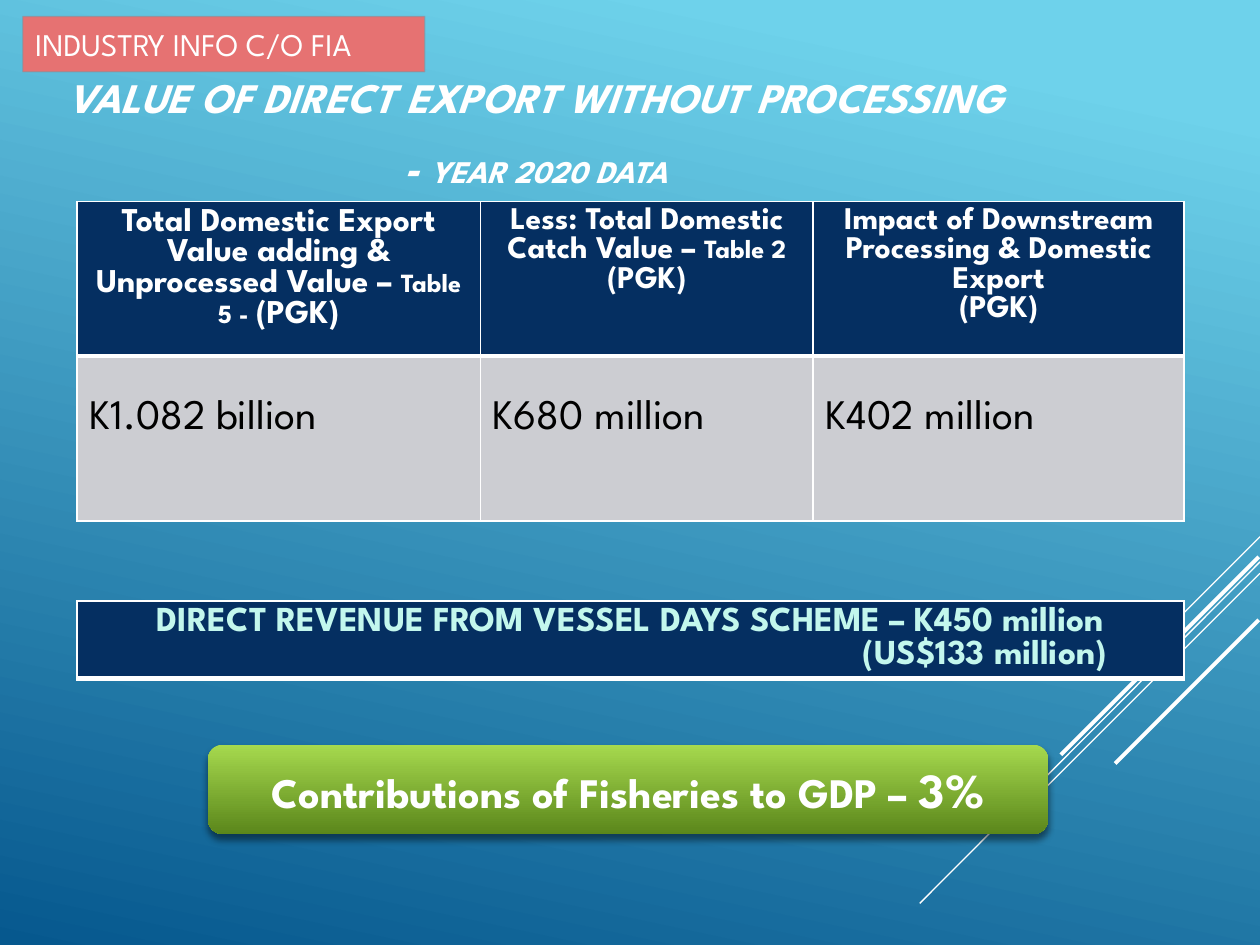
import pptx
import pptx.util
import pptx.dml.color
import pptx.enum.shapes
import pptx.enum.text
import pptx.oxml
import pptx.oxml.ns

Pt = pptx.util.Pt
CENTER = pptx.enum.text.PP_ALIGN.CENTER
LEFT = pptx.enum.text.PP_ALIGN.LEFT
MIDDLE = pptx.enum.text.MSO_ANCHOR.MIDDLE
SHAPES = pptx.enum.shapes.MSO_SHAPE
FONT = "League Spartan"
COLORS = {
    "sky": "6ED2EB", "deep": "06588E", "white": "FFFFFF", "black": "000000",
    "navy": "052F61", "grey": "CCCDD2", "mint": "C3F7ED", "coral": "E67272",
    "outline": "89919C", "lime": "A6D94E", "olive": "5B871B",
}


def rgb(name):
    return pptx.dml.color.RGBColor.from_string(COLORS[name])


def xml(text):
    return pptx.oxml.parse_xml(text.replace(">", f" {pptx.oxml.ns.nsdecls('a')}>", 1))


def add_text(paragraph, text, size=18, color="white", bold=False, italic=False, align=LEFT):
    paragraph.alignment = align
    run = paragraph.add_run()
    run.text = text
    run.font.name = FONT
    run.font.size = Pt(size)
    run.font.bold = bold
    run.font.italic = italic
    run.font.color.rgb = rgb(color)


def fill_gradient(fill, stops, angle):
    fill.gradient()
    fill.gradient_angle = 360 - angle
    for stop, (position, color) in zip(fill.gradient_stops, stops):
        stop.position = position
        stop.color.rgb = rgb(color)


def set_borders(cell, bottom):
    properties = cell._tc.get_or_add_tcPr()
    widths = {"lnL": 1, "lnR": 1, "lnT": 1, "lnB": bottom}
    for index, (side, width) in enumerate(widths.items()):
        properties.insert(index, xml(
            f'<a:{side} w="{int(Pt(width))}"><a:solidFill>'
            f'<a:srgbClr val="{COLORS["white"]}"/></a:solidFill></a:{side}>'))


def format_cell(cell, fill, bottom=1):
    cell.fill.solid()
    cell.fill.fore_color.rgb = rgb(fill)
    set_borders(cell, bottom)


def add_grid(slide, left, top, widths, heights):
    frame = slide.shapes.add_table(len(heights), len(widths), Pt(left), Pt(top),
                                   Pt(sum(widths)), Pt(sum(heights)))
    table = frame.table
    table.horz_banding = False
    for column, width in zip(table.columns, widths):
        column.width = Pt(width)
    for row, height in zip(table.rows, heights):
        row.height = Pt(height)
    return table


def add_box(slide, kind, left, top, width, height):
    shape = slide.shapes.add_shape(kind, Pt(left), Pt(top), Pt(width), Pt(height))
    shape.shadow.inherit = False
    shape.text_frame.word_wrap = True
    shape.text_frame.vertical_anchor = MIDDLE
    return shape


# Diagonal lines in the lower right corner
def add_diagonals(slide):
    for x1, y1, x2, y2, width in (
            (720, 306.7, 660.2, 366.5, 0.75), (720, 321.1, 525.6, 516.2, 0.75),
            (720, 327.6, 596.2, 451.4, 0.75), (719.3, 318.2, 606.2, 431.3, 2.25),
            (719.3, 354.2, 637.2, 436.3, 2.25)):
        line = slide.shapes.add_connector(pptx.enum.shapes.MSO_CONNECTOR.STRAIGHT,
                                          Pt(x1), Pt(y1), Pt(x2), Pt(y2))
        line.line.color.rgb = rgb("white")
        line.line.width = Pt(width)
        line._element.spPr.append(xml("<a:effectLst></a:effectLst>"))


def add_title(slide, left, top, width, height):
    title = slide.shapes.title
    title.left, title.top, title.width, title.height = map(Pt, (left, top, width, height))
    frame = title.text_frame
    frame.word_wrap = True
    frame.vertical_anchor = MIDDLE
    frame.margin_bottom = Pt(7)
    paragraph = frame.paragraphs[0]
    paragraph.line_spacing = 1.4
    style = {"bold": True, "italic": True, "align": CENTER}
    add_text(paragraph, "VALUE OF DIRECT EXPORT WITHOUT PROCESSING", size=24, **style)
    paragraph.add_line_break()
    add_text(paragraph, "- ", size=24, **style)
    add_text(paragraph, "YEAR 2020 DATA", size=18, **style)


# Export values: each column has header paragraphs made of (text, size) runs
def add_export_table(slide, left, top):
    columns = [
        (230.6, [[("Total Domestic Export", 19)],
                 [("Value adding & Unprocessed Value – ", 19), ("Table 5 - ", 15), ("(PGK)", 19)]],
         "K1.082 billion"),
        (190.2, [[("Less: Total Domestic Catch Value – ", 18), ("Table 2", 15)], [("(PGK)", 18)]],
         "K680 million"),
        (212, [[("Impact of Downstream Processing & Domestic Export", 18)], [("(PGK)", 18)]],
         "K402 million"),
    ]
    table = add_grid(slide, left, top, [column[0] for column in columns], [88.3, 94.3])
    for index, (_, header, value) in enumerate(columns):
        cell = table.cell(0, index)
        format_cell(cell, "navy", bottom=3)
        first, second = cell.text_frame.paragraphs[0], cell.text_frame.add_paragraph()
        for paragraph, runs in zip((first, second), header):
            for text, size in runs:
                add_text(paragraph, text, size=size, bold=True, align=CENTER)
        cell = table.cell(1, index)
        format_cell(cell, "grey")
        cell.margin_top = Pt(25)
        add_text(cell.text_frame.paragraphs[0], value, size=24, color="black")


def add_revenue_table(slide, left, top, width, height):
    cell = add_grid(slide, left, top, [width], [height]).cell(0, 0)
    format_cell(cell, "navy", bottom=3)
    style = {"size": 20, "color": "mint", "bold": True, "align": CENTER}
    add_text(cell.text_frame.paragraphs[0],
             "DIRECT REVENUE FROM VESSEL DAYS SCHEME – K450 million", **style)
    dollars = cell.text_frame.add_paragraph()
    dollars._p.get_or_add_pPr().set("marL", str(int(Pt(405))))
    add_text(dollars, "(US$133 million)", **style)


def add_contribution(slide, left, top, width, height):
    shape = add_box(slide, SHAPES.ROUNDED_RECTANGLE, left, top, width, height)
    fill_gradient(shape.fill, [(0, "lime"), (1, "olive")], 90)
    shape.line.fill.background()
    effects = shape._element.spPr.find(pptx.oxml.ns.qn("a:effectLst"))
    effects.append(xml(
        f'<a:outerShdw blurRad="{int(Pt(4))}" dist="{int(Pt(3))}" dir="5400000" rotWithShape="0">'
        f'<a:srgbClr val="{COLORS["black"]}"><a:alpha val="46000"/></a:srgbClr></a:outerShdw>'))
    paragraph = shape.text_frame.paragraphs[0]
    add_text(paragraph, "Contributions of Fisheries to GDP – ", size=24, bold=True, align=CENTER)
    add_text(paragraph, "3%", size=28, bold=True, align=CENTER)


def add_source_tag(slide, left, top, width, height):
    shape = add_box(slide, SHAPES.RECTANGLE, left, top, width, height)
    shape.fill.solid()
    shape.fill.fore_color.rgb = rgb("coral")
    shape.line.color.rgb = rgb("outline")
    shape.line.width = Pt(0.75)
    color = shape.line._ln.find(".//" + pptx.oxml.ns.qn("a:srgbClr"))
    color.append(xml('<a:alpha val="60000"></a:alpha>'))
    add_text(shape.text_frame.paragraphs[0], "INDUSTRY INFO C/O FIA", size=18)


def main():
    presentation = pptx.Presentation()
    presentation.slide_width, presentation.slide_height = Pt(720), Pt(540)
    slide = presentation.slides.add_slide(presentation.slide_layouts[5])
    fill_gradient(slide.background.fill, [(0.1, "sky"), (1, "deep")], 102)
    add_diagonals(slide)
    add_title(slide, 13, 42.5, 586, 57.6)
    add_export_table(slide, 43.9, 115.2)
    add_contribution(slide, 118.8, 425.5, 480.2, 51.1)
    add_revenue_table(slide, 43.9, 343.4, 632.8, 44)
    add_source_tag(slide, 13, 9.4, 229.7, 31.7)
    presentation.save("out.pptx")


if __name__ == "__main__":
    main()
